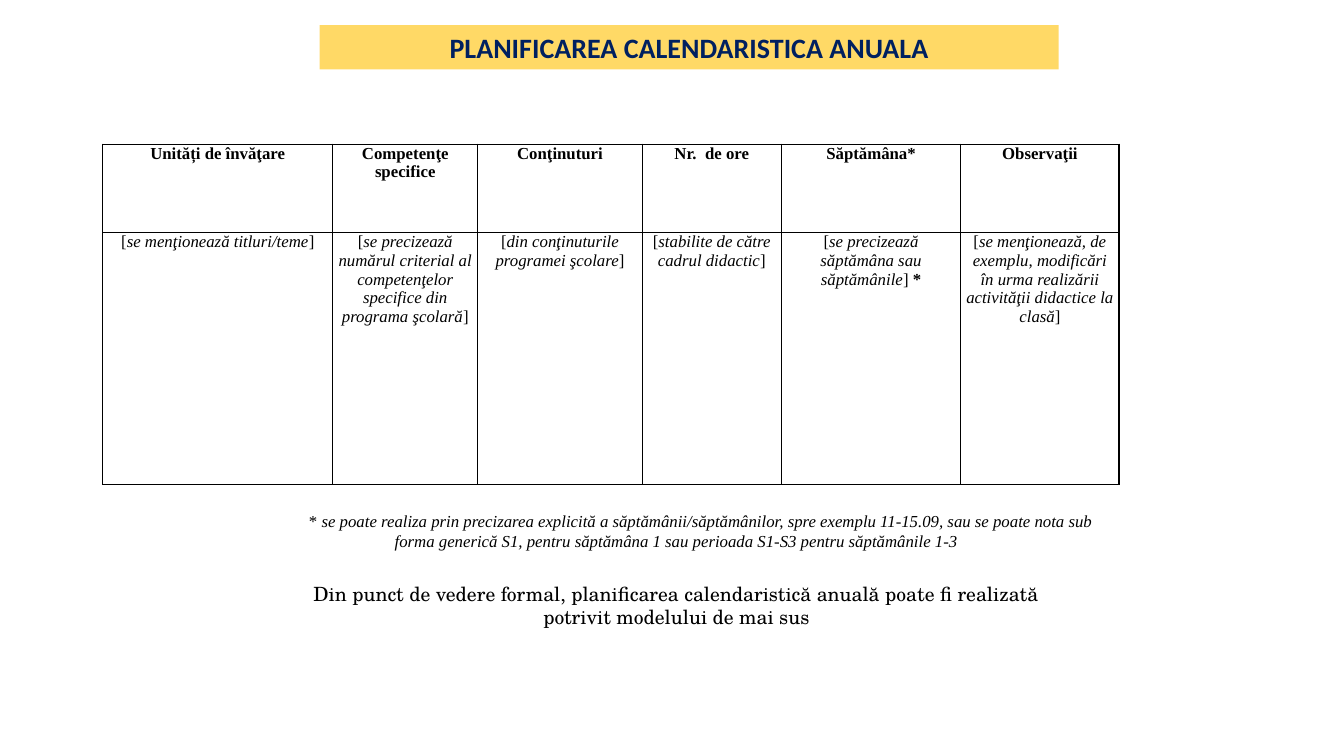
from lxml import etree
from pptx import Presentation
from pptx import util as u
from pptx.dml.color import RGBColor
from pptx.enum import shapes, text
from pptx.oxml import ns

SERIF = "Times New Roman"
BLACK = "000000"


def add_run(paragraph, wording, font, size, color=BLACK, bold=False, italic=False):
    run = paragraph.add_run()
    run.text = wording
    run.font.name = font
    run.font.size = u.Pt(size)
    run.font.bold = bold
    run.font.italic = italic
    run.font.color.rgb = RGBColor.from_string(color)
    paragraph.alignment = text.PP_ALIGN.CENTER


def add_border(cell, side):
    line = etree.SubElement(cell._tc.get_or_add_tcPr(), ns.qn(f"a:{side}"), w=str(u.Pt(1)))
    fill = etree.SubElement(line, ns.qn("a:solidFill"))
    etree.SubElement(fill, ns.qn("a:srgbClr"), val=BLACK)


presentation = Presentation()
presentation.slide_width = u.Inches(13.33)
presentation.slide_height = u.Inches(7.5)
slide = presentation.slides.add_slide(presentation.slide_layouts[6])

columns = [
    (2.28, "Unități de învăţare", "se menţionează titluri/teme"),
    (1.44, "Competenţe specifice",
     "se precizează numărul criterial al competenţelor specifice din programa şcolară"),
    (1.63, "Conţinuturi", "din conţinuturile programei şcolare"),
    (1.38, "Nr.  de ore", "stabilite de către cadrul didactic"),
    (1.78, "Săptămâna*", "se precizează săptămâna sau săptămânile"),
    (1.57, "Observaţii",
     "se menţionează, de exemplu, modificări în urma realizării activităţii didactice la clasă"),
]
table = slide.shapes.add_table(
    2, len(columns), u.Inches(1.02), u.Inches(1.43), u.Inches(10.09), u.Inches(3.38)).table
table.first_row = False
table.horz_banding = False
table.rows[0].height = u.Inches(0.88)
table.rows[1].height = u.Inches(2.5)

for index, (width, heading, hint) in enumerate(columns):
    table.columns[index].width = u.Inches(width)
    heading_cell, hint_cell = table.cell(0, index), table.cell(1, index)
    for cell in (heading_cell, hint_cell):
        cell.margin_left = cell.margin_right = u.Inches(0.05)
        cell.margin_top = cell.margin_bottom = 0
        for side in ("lnL", "lnR", "lnT", "lnB"):
            add_border(cell, side)
        cell.fill.background()
    add_run(heading_cell.text_frame.paragraphs[0], heading, SERIF, 12, bold=True)
    hint_paragraph = hint_cell.text_frame.paragraphs[0]
    add_run(hint_paragraph, "[", SERIF, 12)
    add_run(hint_paragraph, hint, SERIF, 12, italic=True)
    add_run(hint_paragraph, "]", SERIF, 12)
    if heading.endswith("*"):
        add_run(hint_paragraph, " *", SERIF, 12, bold=True)

footnote = slide.shapes.add_textbox(
    u.Inches(2.42), u.Inches(5.01), u.Inches(8.58), u.Inches(0.51))
footnote.text_frame.word_wrap = True
footnote.text_frame.vertical_anchor = text.MSO_ANCHOR.MIDDLE
footnote_paragraph = footnote.text_frame.paragraphs[0]
footnote_paragraph._p.get_or_add_pPr().set("indent", str(u.Inches(0.49)))
add_run(footnote_paragraph, "*", SERIF, 12)
add_run(footnote_paragraph,
        " se poate realiza prin precizarea explicită a săptămânii/săptămânilor, "
        "spre exemplu 11-15.09, sau se poate nota sub forma generică S1, "
        "pentru săptămâna 1 sau perioada S1-S3 pentru săptămânile 1-3",
        SERIF, 12, italic=True)

remark = slide.shapes.add_textbox(
    u.Inches(2.67), u.Inches(5.72), u.Inches(8.08), u.Inches(0.57))
remark.text_frame.word_wrap = True
add_run(remark.text_frame.paragraphs[0],
        "Din punct de vedere formal, planificarea calendaristică anuală "
        "poate fi realizată potrivit modelului de mai sus",
        "TeX Gyre Schola", 14)

banner = slide.shapes.add_shape(
    shapes.MSO_SHAPE.RECTANGLE, u.Inches(3.17), u.Inches(0.25), u.Inches(7.33), u.Inches(0.44))
banner.shadow.inherit = False
banner.fill.solid()
banner.fill.fore_color.rgb = RGBColor.from_string("FFD966")
banner.line.fill.background()
banner.text_frame.word_wrap = True
banner.text_frame.vertical_anchor = text.MSO_ANCHOR.TOP
add_run(banner.text_frame.paragraphs[0], "PLANIFICAREA CALENDARISTICA ANUALA",
        "Calibri", 20, color="002060", bold=True)

presentation.save("out.pptx")
